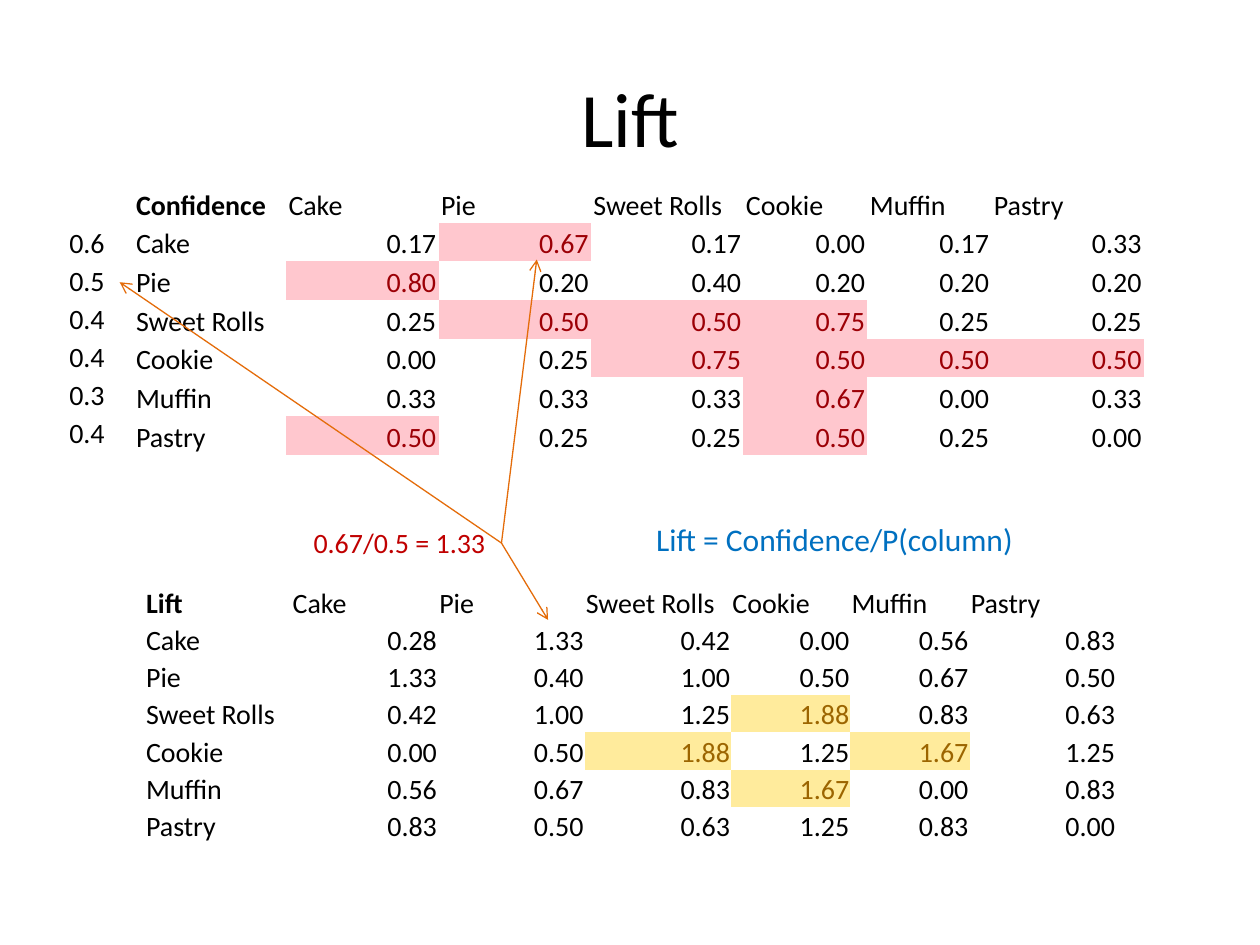
from pptx import Presentation
from pptx.dml.color import RGBColor
from pptx.enum.shapes import MSO_CONNECTOR
from pptx.enum.text import MSO_ANCHOR, PP_ALIGN
from pptx.oxml.ns import qn
from pptx.util import Inches, Pt
from lxml import etree

LEFT, RIGHT, CENTER = PP_ALIGN.LEFT, PP_ALIGN.RIGHT, PP_ALIGN.CENTER
MIDDLE, BOTTOM, TOP = MSO_ANCHOR.MIDDLE, MSO_ANCHOR.BOTTOM, MSO_ANCHOR.TOP
STRAIGHT = MSO_CONNECTOR.STRAIGHT

BLACK = RGBColor(0x00, 0x00, 0x00)
BLUE = RGBColor(0x00, 0x70, 0xC0)
RED = RGBColor(0xC0, 0x00, 0x00)
ORANGE = RGBColor(0xE4, 0x6C, 0x0A)
PINK = RGBColor(0xFF, 0xC7, 0xCE)
WINE = RGBColor(0x9C, 0x00, 0x06)
CREAM = RGBColor(0xFF, 0xEB, 0x9C)
BROWN = RGBColor(0x9C, 0x65, 0x00)

FONT = "Calibri"
PLAIN = "{2D5ABB26-0587-4C30-8999-92F81FD0307C}"
WIDTH, HEIGHT = 10, 7.5
SHARES = [1.23] * 4 + [1] * 2 + [1.23]
ITEMS = ["Cake", "Pie", "Sweet Rolls", "Cookie", "Muffin", "Pastry"]
ODDS = ["0.6", "0.5", "0.4", "0.4", "0.3", "0.4"]
TRUST = """0.17 0.67 0.17 0.00 0.17 0.33
0.80 0.20 0.40 0.20 0.20 0.20
0.25 0.50 0.50 0.75 0.25 0.25
0.00 0.25 0.75 0.50 0.50 0.50
0.33 0.33 0.33 0.67 0.00 0.33
0.50 0.25 0.25 0.50 0.25 0.00"""
LIFT = """0.28 1.33 0.42 0.00 0.56 0.83
1.33 0.40 1.00 0.50 0.67 0.50
0.42 1.00 1.25 1.88 0.83 0.63
0.00 0.50 1.88 1.25 1.67 1.25
0.56 0.67 0.83 1.67 0.00 0.83
0.83 0.50 0.63 1.25 0.83 0.00"""


def style(para, text, size, color, align=LEFT, bold=False):
    para.text = text
    para.alignment = align
    font = para.font
    font.name, font.size, font.bold = FONT, Pt(size), bold
    font.color.rgb = color


def label(slide, box, text, size, color, align=LEFT, anchor=TOP, wrap=False):
    frame = slide.shapes.add_textbox(*map(Inches, box)).text_frame
    frame.word_wrap = wrap
    frame.vertical_anchor = anchor
    style(frame.paragraphs[0], text, size, color, align)


def grid(slide, box, rows, shares, pad, paint):
    shape = slide.shapes.add_table(len(rows), len(shares), *map(Inches, box))
    for mark in shape._element.iter(qn("a:tableStyleId")):
        mark.text = PLAIN
    table = shape.table
    table.first_row = table.horz_banding = False
    for col, share in zip(table.columns, shares):
        col.width = Inches(box[2] * share / sum(shares))
    for r, row in enumerate(rows):
        table.rows[r].height = Inches(box[3] / len(rows))
        for c, text in enumerate(row):
            cell = table.cell(r, c)
            cell.margin_left = cell.margin_right = cell.margin_top = Inches(pad)
            cell.margin_bottom = 0
            cell.vertical_anchor = BOTTOM
            fill, color, align, bold = paint(r, c, text)
            if fill is None:
                cell.fill.background()
            else:
                cell.fill.solid()
                cell.fill.fore_color.rgb = fill
            style(cell.text_frame.paragraphs[0], text, 16, color, align, bold)


def matrix(slide, box, name, data, pad, limit, fill, ink):
    def paint(r, c, text):
        if r == 0 or c == 0:
            return None, BLACK, LEFT, r == c
        if float(text) >= limit:
            return fill, ink, RIGHT, False
        return None, BLACK, RIGHT, False

    rows = [[name] + ITEMS]
    rows += [[item] + line.split() for item, line in zip(ITEMS, data.splitlines())]
    grid(slide, box, rows, SHARES, pad, paint)


def odds(slide, box):
    grid(slide, box, [[odd] for odd in ODDS], [1], 0.02,
         lambda r, c, text: (None, BLACK, RIGHT, False))


def arrows(slide, start, ends):
    for end in ends:
        line = slide.shapes.add_connector(STRAIGHT, *map(Inches, start + end))
        line.line.color.rgb = ORANGE
        line.line.width = Pt(0.75)
        etree.SubElement(line.line._get_or_add_ln(), qn("a:tailEnd"), type="arrow")
        etree.SubElement(line._element.spPr, qn("a:effectLst"))


def main():
    deck = Presentation()
    deck.slide_width, deck.slide_height = Inches(WIDTH), Inches(HEIGHT)
    slide = deck.slides.add_slide(deck.slide_layouts[6])
    label(slide, (0.05 * WIDTH, 0.04 * HEIGHT, 0.9 * WIDTH, HEIGHT / 6),
          "Lift", 44, BLACK, CENTER, MIDDLE, True)
    matrix(slide, (1.15, 4.63, 7.71, 2.07), "Lift", LIFT, 0.01, 1.5, CREAM, BROWN)
    matrix(slide, (1.06, 1.46, 8.02, 2.15), "Confidence", TRUST, 0.02, 0.5, PINK, WINE)
    label(slide, (5.11, 4.08, 3.08, 0.4), "Lift = Confidence/P(column)", 18, BLUE)
    odds(slide, (0.33, 1.77, 0.52, 1.81))
    label(slide, (2.39, 4.12, 1.58, 0.37), "0.67/0.5 = 1.33", 16, RED)
    arrows(slide, (3.98, 4.31), [(4.35, 4.92), (4.26, 2.06), (0.95, 2.24)])
    deck.save("out.pptx")


if __name__ == "__main__":
    main()
